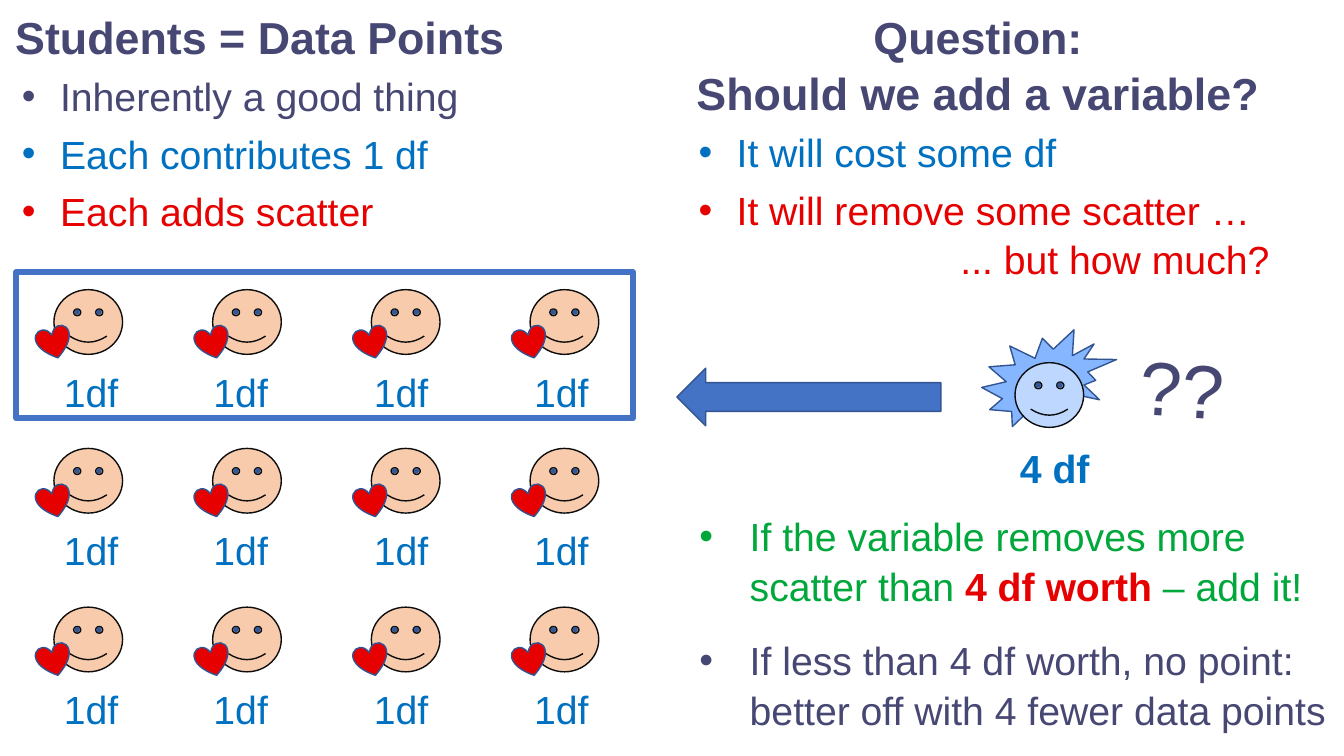
from pptx import Presentation
from pptx.dml.color import RGBColor
from pptx.enum.shapes import MSO_SHAPE
from pptx.enum.text import MSO_ANCHOR, MSO_AUTO_SIZE, PP_ALIGN
from pptx.util import Cm, Pt
from lxml.etree import SubElement
from pptx.oxml.ns import qn

INK = RGBColor(0x47, 0x47, 0x73)
BLUE = RGBColor(0x00, 0x70, 0xC0)
RED = RGBColor(0xE6, 0x00, 0x00)
GREEN = RGBColor(0x00, 0xA8, 0x3C)
SKIN = RGBColor(0xF8, 0xCB, 0xAD)
PALE = RGBColor(0xBD, 0xD7, 0xFF)
HAIR = RGBColor(0x85, 0xB6, 0xFF)
EYE = RGBColor(0x31, 0x57, 0x9B)
EDGE = RGBColor(0x32, 0x54, 0x91)
BLACK = RGBColor(0x0D, 0x0D, 0x0D)
FRAME = RGBColor(0x44, 0x72, 0xC4)

deck = Presentation()
deck.slide_width, deck.slide_height = Cm(33.87), Cm(19.05)
slide = deck.slides.add_slide(deck.slide_layouts[4])
shapes = slide.shapes
slots = {slot.placeholder_format.idx: slot for slot in slide.placeholders}


def write(box, place, lines, size, bold=False, align=PP_ALIGN.LEFT, indent=0):
    """Fill a text shape; each line is a list of (text, colour) parts."""
    box.left, box.top, box.width, box.height = [Cm(v) for v in place]
    frame = box.text_frame
    frame.word_wrap = True
    frame.auto_size = MSO_AUTO_SIZE.NONE
    frame.vertical_anchor = MSO_ANCHOR.TOP
    for i, parts in enumerate(lines):
        para = frame.add_paragraph() if i else frame.paragraphs[0]
        para.alignment = align
        para.line_spacing = 1.05
        para.space_before = Pt(6 if indent else 0)
        props = para._p.get_or_add_pPr()
        props.set("marL", str(Cm(indent)))
        props.set("indent", str(-Cm(indent)))
        if indent:
            SubElement(props, qn("a:buChar")).set("char", "•")
        else:
            SubElement(props, qn("a:buNone"))
        for text, color in parts:
            run = para.add_run()
            run.text = text
            run.font.name = "Arial"
            run.font.size = Pt(size)
            run.font.bold = bold
            run.font.color.rgb = color
    return frame.paragraphs


def draw(kind, place, fill=None, line=None, width=1, turn=0):
    """Add a preset shape without shadow."""
    shape = shapes.add_shape(kind, *[Cm(v) for v in place])
    shape.shadow.inherit = False
    shape.rotation = turn
    if fill is None:
        shape.fill.background()
    else:
        shape.fill.solid()
        shape.fill.fore_color.rgb = fill
    if line is None:
        shape.line.fill.background()
    else:
        shape.line.color.rgb = line
        shape.line.width = Pt(width)


# Headings
write(slots[0], (0.13, 0.05, 15.5, 1.63),
      [[("Students = Data Points", INK)]], 32, bold=True)
write(slots[3], (16.05, 0.05, 17.2, 3),
      [[("Question:", INK)], [("Should we add a variable?", INK)]],
      32, bold=True, align=PP_ALIGN.CENTER)

# Lists
write(slots[2], (0.3, 1.63, 13.6, 4.27),
      [[("Inherently a good thing", INK)],
       [("Each contributes 1 df", BLUE)],
       [("Each adds scatter", RED)]], 28, indent=0.96)
cost = write(slots[4], (17.35, 3.05, 16.28, 4.06),
             [[("It will cost some df", BLUE)],
              [("It will remove some scatter …", RED)],
              [("... but how much?", RED)]], 28, indent=0.96)
rule = write(slots[1], (17.37, 12.73, 16.45, 5.69),
             [[("If the variable removes more scatter than ", GREEN),
               ("4 df worth ", RED), ("– add it!", GREEN)],
              [("If less than 4 df worth, no point: better off "
                "with 4 fewer data points", INK)]], 28, indent=1.27)
rule[0].runs[1].font.bold = True
rule[1].space_before = Pt(18)

# The closing question hangs without a bullet
last = cost[2]
last.space_before = Pt(0)
props = last._p.pPr
props.remove(props.find(qn("a:buChar")))
SubElement(props, qn("a:buNone"))
props.set("marL", str(Cm(6.6)))
props.set("indent", "0")

# Seal of hair behind the new variable's face
draw(MSO_SHAPE.EXPLOSION2, (24.74, 8.31, 3.4, 2.44), HAIR, EDGE)

# Faces: a grid of students, then the variable
faces = [(1.36 + 4 * col, 7.3 + 4 * row, SKIN)
         for row in range(3) for col in range(4)]
faces.append((25.58, 9.14, PALE))
for x, y, fill in faces:
    draw(MSO_SHAPE.SMILEY_FACE, (x, y, 1.73, 1.63), fill, BLACK)
    for step in (0.52, 1.07):
        draw(MSO_SHAPE.OVAL, (x + step, y + 0.5, 0.13, 0.13), EYE)
    if fill == SKIN:
        draw(MSO_SHAPE.HEART, (x - 0.43, y + 0.94, 0.86, 0.79),
             RED, EDGE, turn=345.2)

# Labels under the students
for row in range(3):
    for x in (1.36, 5.13, 9.17, 13.21):
        write(shapes.add_textbox(0, 0, 0, 0),
              (x, 9.09 + 4 * row, 2.2, 1.45), [[("1df", BLUE)]], 28)

# Labels of the variable
marks = shapes.add_textbox(0, 0, 0, 0)
write(marks, (28.5, 8.38, 2.9, 2.57), [[("??", INK)]], 54)
marks.rotation = 3.5
write(shapes.add_textbox(0, 0, 0, 0), (25.35, 11.02, 2.46, 1.45),
      [[("4 df", BLUE)]], 28, bold=True, align=PP_ALIGN.CENTER)

# Frame around four students and the arrow to it
draw(MSO_SHAPE.RECTANGLE, (0.41, 6.86, 15.54, 3.68), line=FRAME, width=4.5)
draw(MSO_SHAPE.DOWN_ARROW, (19.66, 6.68, 1.45, 6.65), FRAME, EDGE, turn=90)

deck.save("out.pptx")
